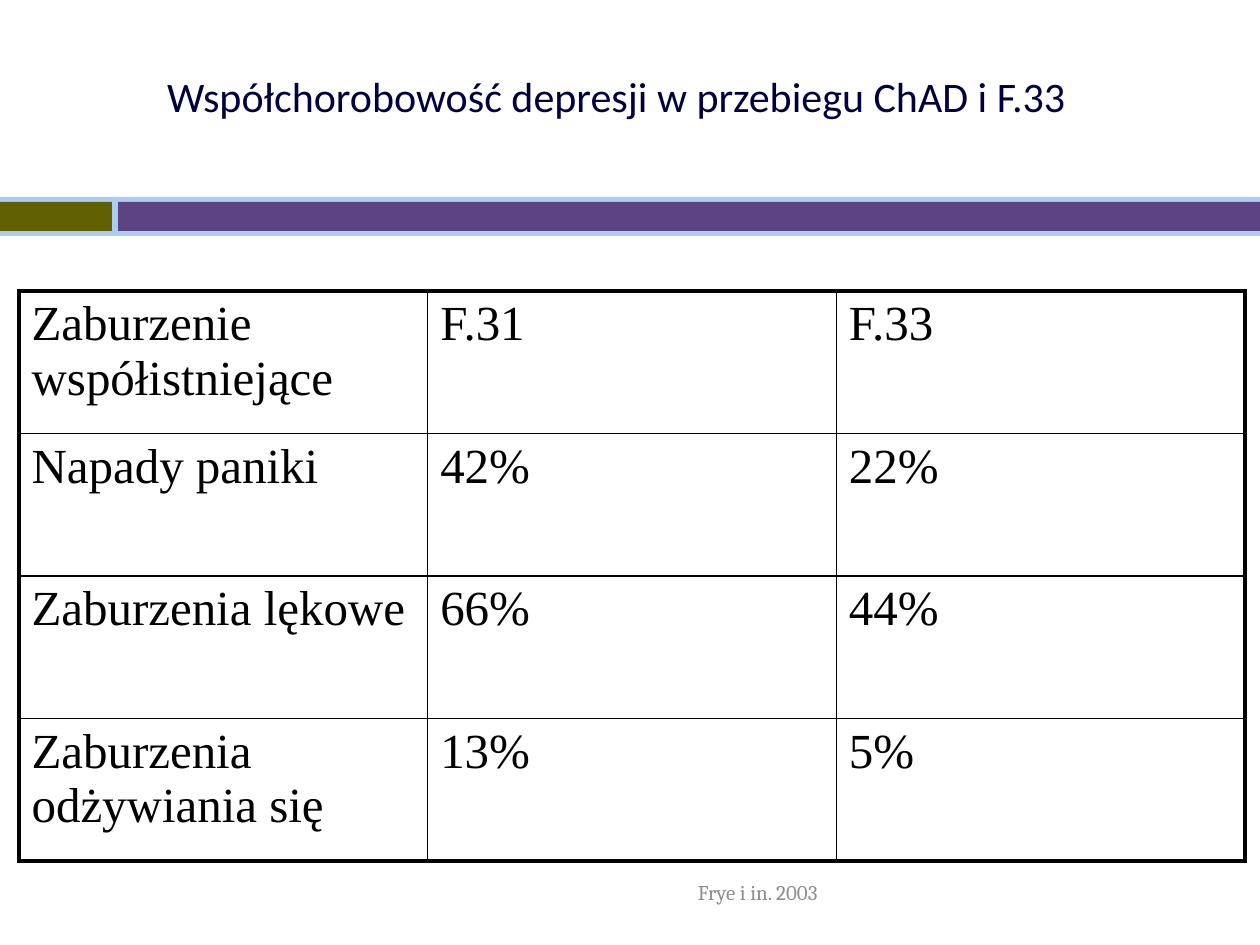
from lxml import etree
from pptx import Presentation
from pptx import util as u
from pptx.dml.color import RGBColor
from pptx.enum import shapes, text
from pptx.oxml.ns import qn

PX = 914400 // 126  # EMU in one px

TITLE = "Współchorobowość depresji w przebiegu ChAD i F.33"
SOURCE = "Frye i in. 2003"
ROWS = [
    ("Zaburzenie współistniejące", "F.31", "F.33"),
    ("Napady paniki", "42%", "22%"),
    ("Zaburzenia lękowe", "66%", "44%"),
    ("Zaburzenia odżywiania się", "13%", "5%"),
]
# left, top, width, height in px
BANDS = [
    ((0, 197, 1260, 39), "ABCDF4"),
    ((0, 202, 112, 29), "606000"),
    ((118, 202, 1142, 29), "5C4381"),
]
TITLE_AT = (4, 16, 1225, 159)
SOURCE_AT = (431, 861, 399, 63)
TABLE_AT = (19, 291, 1226, 570)
TITLE_FONT = {"name": "Calibri", "size": u.Pt(24)}
SOURCE_FONT = {"name": "Cambria", "size": u.Pt(12)}
CELL_FONT = {"name": "Times New Roman", "size": u.Pt(28), "bold": False}
THIN, THICK = 1, 2.25  # border widths in points


def emu(*lengths):
    return [length * PX for length in lengths]


def color(value):
    return RGBColor.from_string(value)


def write(frame, words, font, ink, align):
    para = frame.paragraphs[0]
    para.alignment = align
    span = para.add_run()
    span.text = words
    for name, value in font.items():
        setattr(span.font, name, value)
    span.font.color.rgb = color(ink)


def add_text(page, at, words, font, ink, align):
    frame = page.shapes.add_textbox(*emu(*at)).text_frame
    frame.word_wrap = True
    frame.vertical_anchor = text.MSO_ANCHOR.MIDDLE
    write(frame, words, font, ink, align)


def add_borders(cell, widths):
    props = cell._tc.get_or_add_tcPr()
    for place, (side, points) in enumerate(widths.items()):
        line = etree.Element(qn(f"a:ln{side}"), w=str(u.Pt(points)))
        fill = etree.SubElement(line, qn("a:solidFill"))
        etree.SubElement(fill, qn("a:srgbClr"), val="000000")
        props.insert(place, line)


def add_grid(page):
    count, columns = len(ROWS), len(ROWS[0])
    table = page.shapes.add_table(count, columns, *emu(*TABLE_AT)).table
    table.first_row = table.horz_banding = False
    for r, row in enumerate(ROWS):
        for c, words in enumerate(row):
            cell = table.cell(r, c)
            cell.fill.background()
            write(cell.text_frame, words, CELL_FONT, "000000", text.PP_ALIGN.LEFT)
            # Outer edges are thick, inner ones thin
            outer = {"L": c == 0, "R": c == columns - 1, "T": r == 0, "B": r == count - 1}
            add_borders(cell, {side: THICK if edge else THIN for side, edge in outer.items()})


def main():
    deck = Presentation()
    deck.slide_width, deck.slide_height = emu(1260, 945)
    page = deck.slides.add_slide(deck.slide_layouts[6])

    # Divider bands
    for at, fill in BANDS:
        box = page.shapes.add_shape(shapes.MSO_SHAPE.RECTANGLE, *emu(*at))
        box.shadow.inherit = False
        box.fill.solid()
        box.fill.fore_color.rgb = color(fill)
        box.line.fill.background()

    # Title, table and source
    add_text(page, TITLE_AT, TITLE, TITLE_FONT, "000040", text.PP_ALIGN.CENTER)
    add_grid(page)
    add_text(page, SOURCE_AT, SOURCE, SOURCE_FONT, "8C8C8C", text.PP_ALIGN.RIGHT)

    deck.save("out.pptx")


if __name__ == "__main__":
    main()
